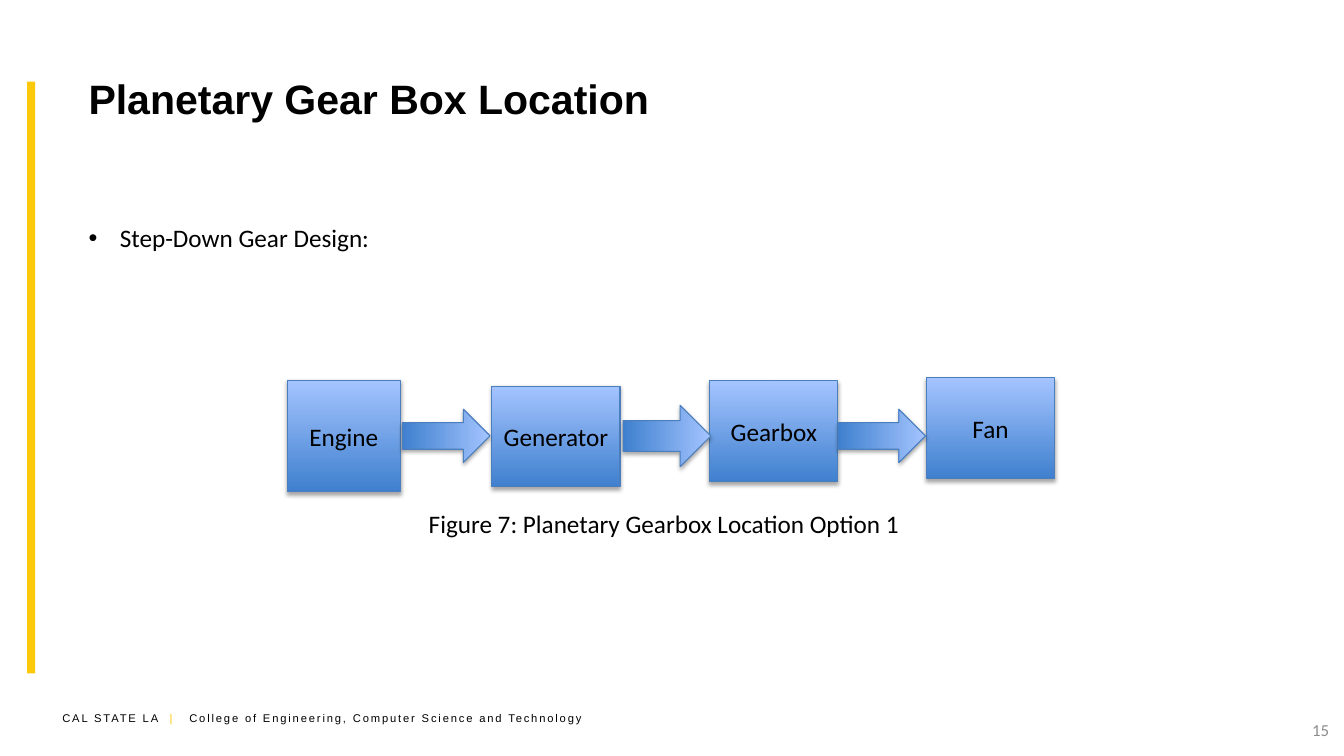
from lxml import etree
from pptx import Presentation
from pptx import util as u
from pptx.dml import color
from pptx.enum import shapes, text
from pptx.oxml import ns


def rgb(value):
    return color.RGBColor.from_string(value)


class SlideBuilder:
    BLACK, GOLD, GREY = "000000", "FCC90A", "8C8C8C"
    DARK_BLUE, LIGHT_BLUE, OUTLINE = "3F80CE", "A4C4FF", "4B7EBC"

    def __init__(self, slide):
        self.slide = slide

    def format_run(self, run, size, font="Calibri", fill=BLACK, bold=False):
        run.font.size = u.Pt(size)
        run.font.name = font
        run.font.bold = bold
        run.font.color.rgb = rgb(fill)

    def text_box(self, box, wording="", size=18, align=text.PP_ALIGN.LEFT,
                 anchor=text.MSO_ANCHOR.TOP, wrap=True, **style):
        shape = self.slide.shapes.add_textbox(*map(u.Inches, box))
        frame = shape.text_frame
        frame.text = wording
        frame.word_wrap = wrap
        frame.vertical_anchor = anchor
        paragraph = frame.paragraphs[0]
        paragraph.alignment = align
        for run in paragraph.runs:
            self.format_run(run, size, **style)
        return paragraph

    def footer(self, box, pieces):
        paragraph = self.text_box(box)
        for wording, fill in pieces:
            run = paragraph.add_run()
            run.text = wording
            self.format_run(run, 8, "Arial", fill)
            run.font._element.set("spc", "130")

    def bullet(self, box, wording):
        paragraph = self.text_box(box, wording, wrap=False)
        properties = paragraph._p.get_or_add_pPr()
        properties.set("marL", str(u.Inches(0.31)))
        properties.set("indent", str(-u.Inches(0.31)))
        etree.SubElement(properties, ns.qn("a:buFont"), typeface="Arial")
        etree.SubElement(properties, ns.qn("a:buChar"), char="•")

    def bar(self, box):
        shape = self.slide.shapes.add_shape(
            shapes.MSO_SHAPE.RECTANGLE, *map(u.Inches, box))
        shape.shadow.inherit = False
        shape.fill.solid()
        shape.fill.fore_color.rgb = rgb(self.GOLD)
        shape.line.fill.background()

    def glossy_shape(self, kind, box):
        shape = self.slide.shapes.add_shape(kind, *map(u.Inches, box))
        shape.fill.gradient()
        shape.fill.gradient_angle = 90
        stops = zip(shape.fill.gradient_stops, (self.DARK_BLUE, self.LIGHT_BLUE))
        for position, (stop, fill) in enumerate(stops):
            stop.position = position
            stop.color.rgb = rgb(fill)
        shape.line.color.rgb = rgb(self.OUTLINE)
        shape.line.width = u.Pt(0.75)
        self.drop_shadow(shape)
        return shape

    def drop_shadow(self, shape):
        shape.shadow.inherit = False
        effects = shape._element.spPr.find(ns.qn("a:effectLst"))
        shadow = etree.SubElement(
            effects, ns.qn("a:outerShdw"), blurRad=str(u.Pt(3.1)),
            dist=str(u.Pt(1.8)), dir="5400000", rotWithShape="0")
        tint = etree.SubElement(shadow, ns.qn("a:srgbClr"), val=self.BLACK)
        etree.SubElement(tint, ns.qn("a:alpha"), val="35000")

    def stage(self, wording, box):
        shape = self.glossy_shape(shapes.MSO_SHAPE.RECTANGLE, box)
        frame = shape.text_frame
        frame.text = wording
        frame.word_wrap = True
        frame.vertical_anchor = text.MSO_ANCHOR.MIDDLE
        paragraph = frame.paragraphs[0]
        paragraph.alignment = text.PP_ALIGN.CENTER
        self.format_run(paragraph.runs[0], 18)

    def arrow(self, left, width):
        shape = self.glossy_shape(
            shapes.MSO_SHAPE.UP_ARROW, (left, 3.89, width, 0.87))
        shape.rotation = 90


def main():
    presentation = Presentation()
    presentation.slide_width = u.Inches(13.33)
    presentation.slide_height = u.Inches(7.5)
    slide = presentation.slides.add_slide(presentation.slide_layouts[6])
    builder = SlideBuilder(slide)

    builder.footer((0.52, 7.01, 5.53, 0.24), [
        ("CAL STATE LA ", builder.BLACK),
        (" |   ", builder.GOLD),
        ("College of Engineering, Computer Science and Technology", builder.BLACK),
    ])
    builder.bar((0.27, 0.81, 0.08, 5.87))
    builder.text_box((10.17, 7.04, 3.11, 0.4), "15", 12, text.PP_ALIGN.RIGHT,
                     text.MSO_ANCHOR.MIDDLE, fill=builder.GREY)
    builder.text_box((0.78, 0.35, 11.87, 1.25), "Planetary Gear Box Location",
                     29.3, anchor=text.MSO_ANCHOR.MIDDLE, font="Arial", bold=True)

    stages = [
        ("Engine", (2.85, 3.77, 1.12, 1.11)),
        ("Generator", (4.88, 3.83, 1.27, 1)),
        ("Gearbox", (7.04, 3.78, 1.27, 1)),
        ("Fan", (9.19, 3.75, 1.27, 1)),
    ]
    for wording, box in stages:
        builder.stage(wording, box)
    for left, width in [(4.16, 0.53), (6.31, 0.61), (8.48, 0.53)]:
        builder.arrow(left, width)

    builder.bullet((0.78, 2.16, 3.02, 0.4), "Step-Down Gear Design:")
    builder.text_box((2.71, 4.99, 7.75, 0.4),
                     "Figure 7: Planetary Gearbox Location Option 1",
                     align=text.PP_ALIGN.CENTER)
    presentation.save("out.pptx")


if __name__ == "__main__":
    main()
